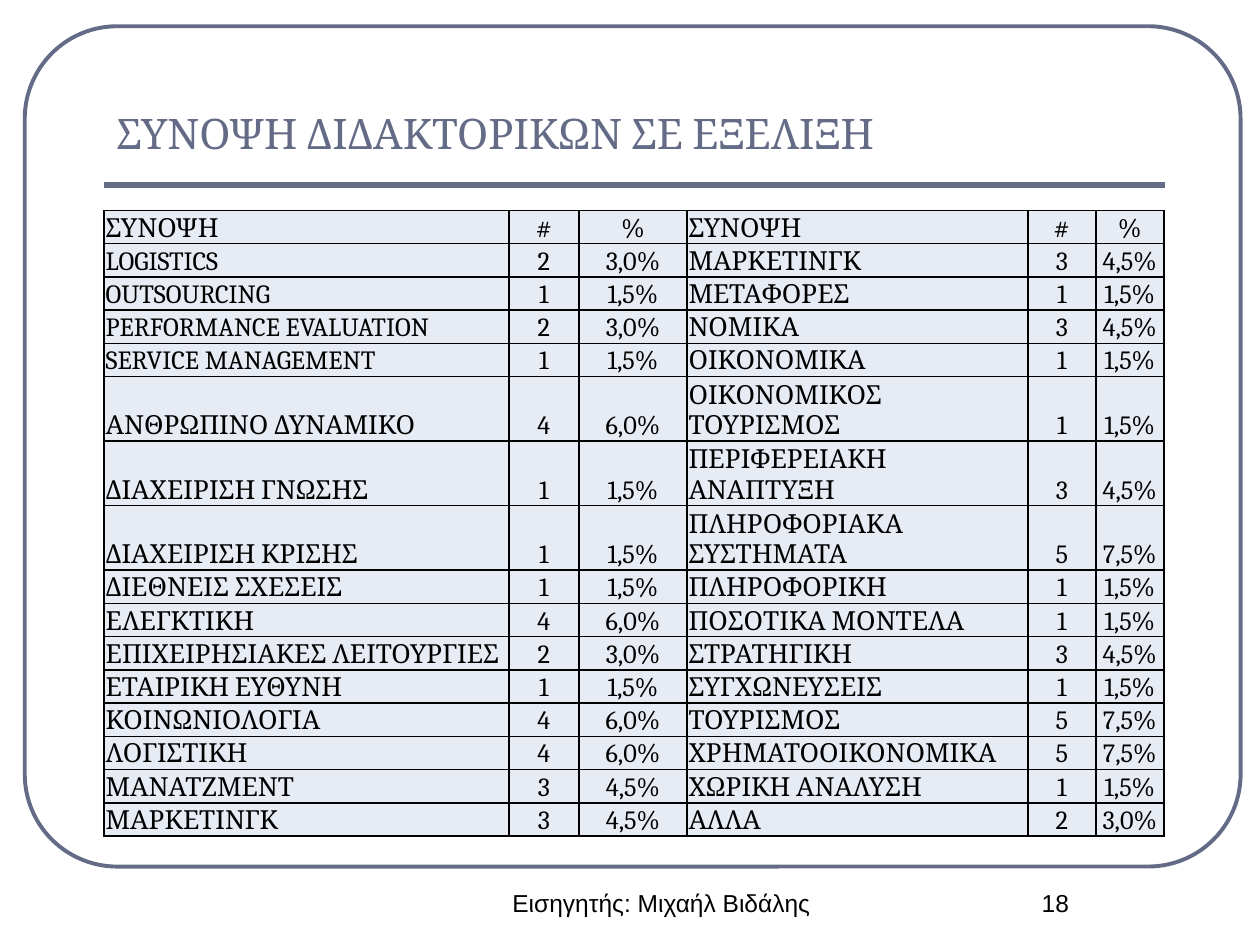
from dataclasses import dataclass

from lxml.etree import SubElement
from pptx import Presentation
from pptx.dml.color import RGBColor
from pptx.enum.shapes import MSO_CONNECTOR, MSO_SHAPE
from pptx.enum.text import MSO_ANCHOR, PP_ALIGN
from pptx.oxml.ns import qn
from pptx.util import Cm, Pt


@dataclass(frozen=True)
class Theme:
    accent: str = "646B86"
    ink: str = "000000"
    cell: str = "E7EBF4"
    serif: str = "Cambria"
    sans: str = "Arial"
    title_size: int = 24
    table_size: int = 15
    footer_size: int = 14


# Subjects and number of theses: left half, right half
LEFT = [
    ("LOGISTICS", 2), ("OUTSOURCING", 1), ("PERFORMANCE EVALUATION", 2),
    ("SERVICE MANAGEMENT", 1), ("ΑΝΘΡΩΠΙΝΟ ΔΥΝΑΜΙΚΟ", 4),
    ("ΔΙΑΧΕΙΡΙΣΗ ΓΝΩΣΗΣ", 1), ("ΔΙΑΧΕΙΡΙΣΗ ΚΡΙΣΗΣ", 1),
    ("ΔΙΕΘΝΕΙΣ ΣΧΕΣΕΙΣ", 1), ("ΕΛΕΓΚΤΙΚΗ", 4),
    ("ΕΠΙΧΕΙΡΗΣΙΑΚΕΣ ΛΕΙΤΟΥΡΓΙΕΣ", 2), ("ΕΤΑΙΡΙΚΗ ΕΥΘΥΝΗ", 1),
    ("ΚΟΙΝΩΝΙΟΛΟΓΙΑ", 4), ("ΛΟΓΙΣΤΙΚΗ", 4), ("ΜΑΝΑΤΖΜΕΝΤ", 3),
    ("ΜΑΡΚΕΤΙΝΓΚ", 3),
]
RIGHT = [
    ("ΜΑΡΚΕΤΙΝΓΚ", 3), ("ΜΕΤΑΦΟΡΕΣ", 1), ("ΝΟΜΙΚΑ", 3), ("ΟΙΚΟΝΟΜΙΚΑ", 1),
    ("ΟΙΚΟΝΟΜΙΚΟΣ ΤΟΥΡΙΣΜΟΣ", 1), ("ΠΕΡΙΦΕΡΕΙΑΚΗ ΑΝΑΠΤΥΞΗ", 3),
    ("ΠΛΗΡΟΦΟΡΙΑΚΑ ΣΥΣΤΗΜΑΤΑ", 5), ("ΠΛΗΡΟΦΟΡΙΚΗ", 1),
    ("ΠΟΣΟΤΙΚΑ ΜΟΝΤΕΛΑ", 1), ("ΣΤΡΑΤΗΓΙΚΗ", 3), ("ΣΥΓΧΩΝΕΥΣΕΙΣ", 1),
    ("ΤΟΥΡΙΣΜΟΣ", 5), ("ΧΡΗΜΑΤΟΟΙΚΟΝΟΜΙΚΑ", 5), ("ΧΩΡΙΚΗ ΑΝΑΛΥΣΗ", 1),
    ("ΑΛΛΑ", 2),
]
HEADER = ["ΣΥΝΟΨΗ", "#", "%"]
SHARE_PER_THESIS = 1.5
COL_WIDTHS = [8.16, 1.41, 2.18, 6.87, 1.37, 1.37]
ROW_HEIGHT, TALL_ROW_HEIGHT = 0.67, 1.26
TALL_ROWS = (5, 6, 7)


def entry(subject, count):
    share = f"{count * SHARE_PER_THESIS:.1f}%".replace(".", ",")
    return [subject, str(count), share]


def set_format(target, values):
    for name, value in values.items():
        setattr(target, name, value)


class SlideBuilder:
    def __init__(self, slide, theme):
        self.s, self.theme = slide, theme

    def outline(self, line, width):
        line.color.rgb = RGBColor.from_string(self.theme.accent)
        line.width = Pt(width)

    def add_run(self, tf, text, size, font, color, align=PP_ALIGN.LEFT):
        p = tf.paragraphs[0]
        p.alignment = align
        r = p.add_run()
        r.text = text
        set_format(r.font, {"size": Pt(size), "name": font})
        r.font.color.rgb = RGBColor.from_string(color)

    def frame(self, x, y, w, h, radius):
        sp = self.s.shapes.add_shape(
            MSO_SHAPE.ROUNDED_RECTANGLE, Cm(x), Cm(y), Cm(w), Cm(h))
        sp.adjustments[0] = radius
        sp.shadow.inherit = False
        sp.fill.background()
        self.outline(sp.line, 2.25)

    def rule(self, x1, x2, y):
        sp = self.s.shapes.add_connector(
            MSO_CONNECTOR.STRAIGHT, Cm(x1), Cm(y), Cm(x2), Cm(y))
        self.outline(sp.line, 3)
        SubElement(sp._element.spPr, qn("a:effectLst"))

    def text(self, x, y, w, h, text, size, font, color,
             align=PP_ALIGN.LEFT, anchor=MSO_ANCHOR.TOP):
        tf = self.s.shapes.add_textbox(Cm(x), Cm(y), Cm(w), Cm(h)).text_frame
        set_format(tf, {"word_wrap": True, "vertical_anchor": anchor})
        self.add_run(tf, text, size, font, color, align)

    def borders(self, cell):
        tc_pr = cell._tc.get_or_add_tcPr()
        for side in ("lnL", "lnR", "lnT", "lnB"):
            ln = SubElement(tc_pr, qn(f"a:{side}"), w=str(Pt(1)))
            fill = SubElement(ln, qn("a:solidFill"))
            SubElement(fill, qn("a:srgbClr"), val=self.theme.ink)

    def table(self, x, y, rows, widths, heights):
        t = self.theme
        table = self.s.shapes.add_table(
            len(rows), len(widths), Cm(x), Cm(y),
            Cm(sum(widths)), Cm(sum(heights))).table
        for column, width in zip(table.columns, widths):
            column.width = Cm(width)
        for row, height in zip(table.rows, heights):
            row.height = Cm(height)
        cell_format = {
            "margin_left": Cm(0.03), "margin_right": Cm(0.03),
            "margin_top": Cm(0.03), "margin_bottom": 0,
            "vertical_anchor": MSO_ANCHOR.BOTTOM,
        }
        for i, values in enumerate(rows):
            for j, value in enumerate(values):
                cell = table.cell(i, j)
                set_format(cell, cell_format)
                self.borders(cell)
                cell.fill.solid()
                cell.fill.fore_color.rgb = RGBColor.from_string(t.cell)
                align = PP_ALIGN.CENTER if j % len(HEADER) else PP_ALIGN.LEFT
                self.add_run(cell.text_frame, value, t.table_size, t.serif,
                             t.ink, align)


def main():
    prs = Presentation()
    set_format(prs, {"slide_width": Cm(25.4), "slide_height": Cm(19.05)})
    theme = Theme()
    b = SlideBuilder(prs.slides.add_slide(prs.slide_layouts[6]), theme)

    # Frame, title and rule
    b.frame(0.5, 0.53, 24.51, 16.94, 0.11)
    b.rule(2.1, 23.48, 3.73)
    b.text(2.1, 0.91, 21.38, 2.39, "ΣΥΝΟΨΗ ΔΙΔΑΚΤΟΡΙΚΩΝ ΣΕ ΕΞΕΛΙΞΗ",
           theme.title_size, theme.serif, theme.accent,
           anchor=MSO_ANCHOR.BOTTOM)

    # Table of subjects
    rows = [HEADER * 2]
    rows += [entry(*a) + entry(*c) for a, c in zip(LEFT, RIGHT)]
    heights = [TALL_ROW_HEIGHT if i in TALL_ROWS else ROW_HEIGHT
               for i in range(len(rows))]
    b.table(2.1, 4.24, rows, COL_WIDTHS, heights)

    # Footer
    for x, w, text in [(9.31, 8.05, "Εισηγητής: Μιχαήλ Βιδάλης"),
                       (19.05, 4.45, "18")]:
        b.text(x, 17.78, w, 1.27, text, theme.footer_size, theme.sans,
               theme.ink, PP_ALIGN.CENTER)

    prs.save("out.pptx")


if __name__ == "__main__":
    main()
